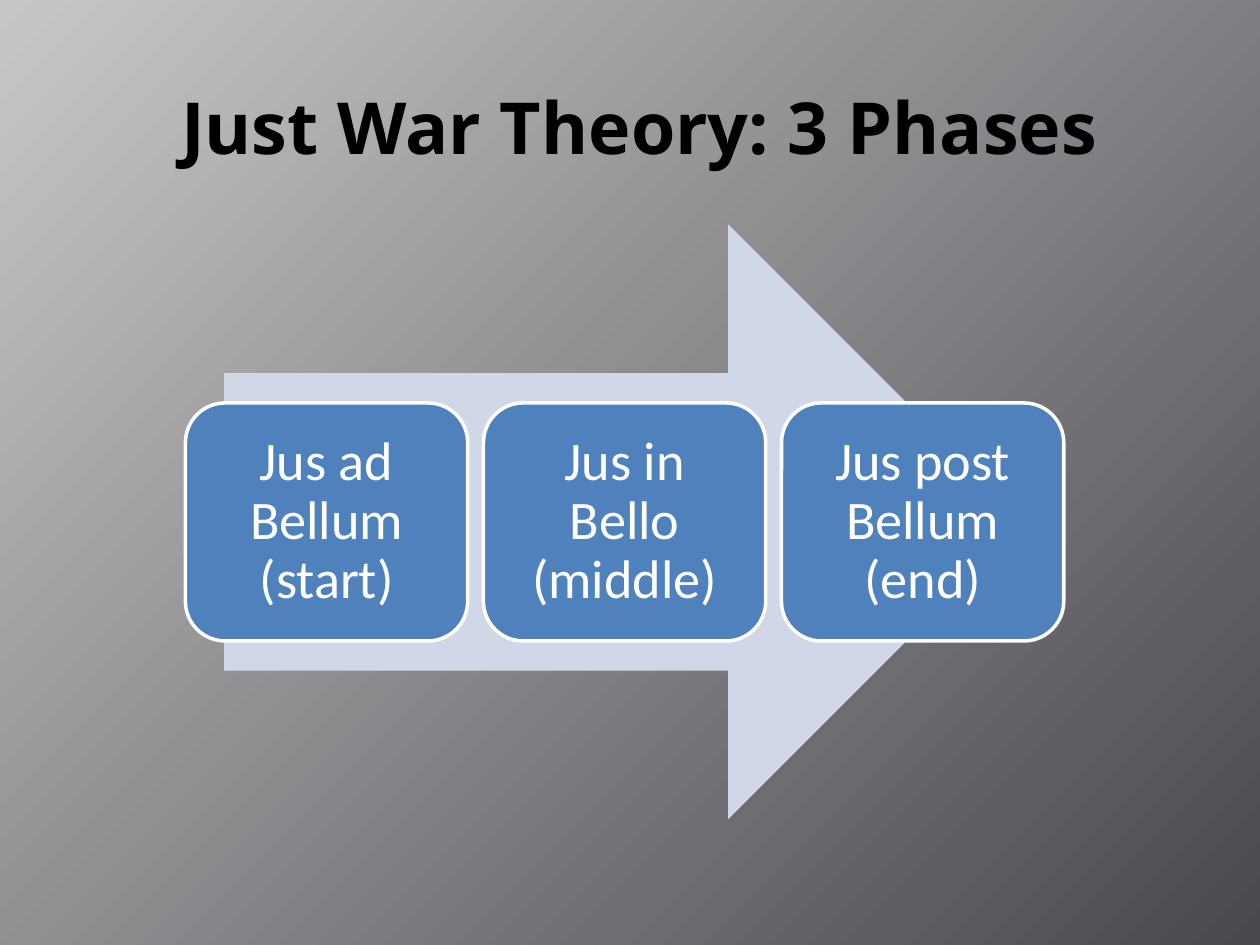
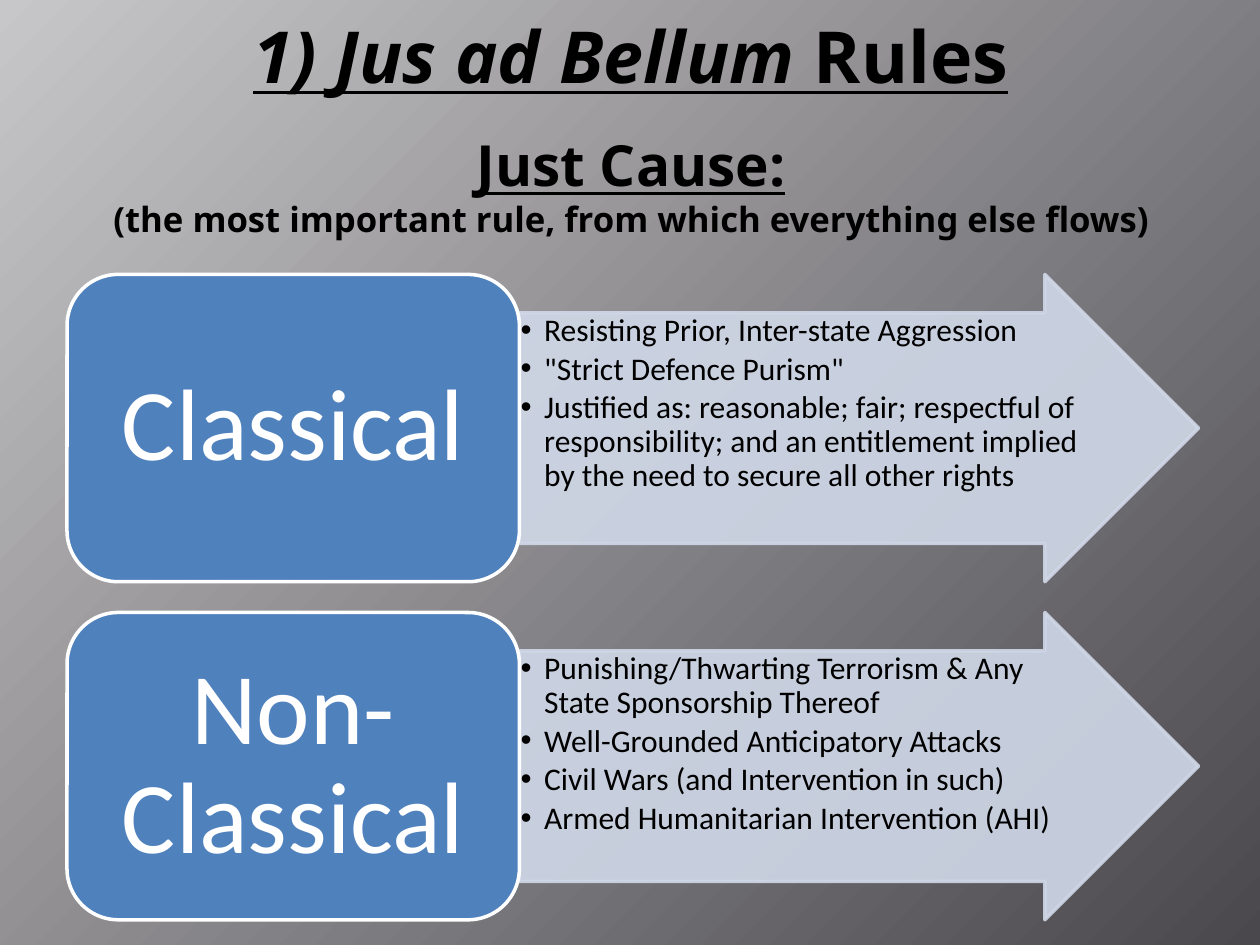
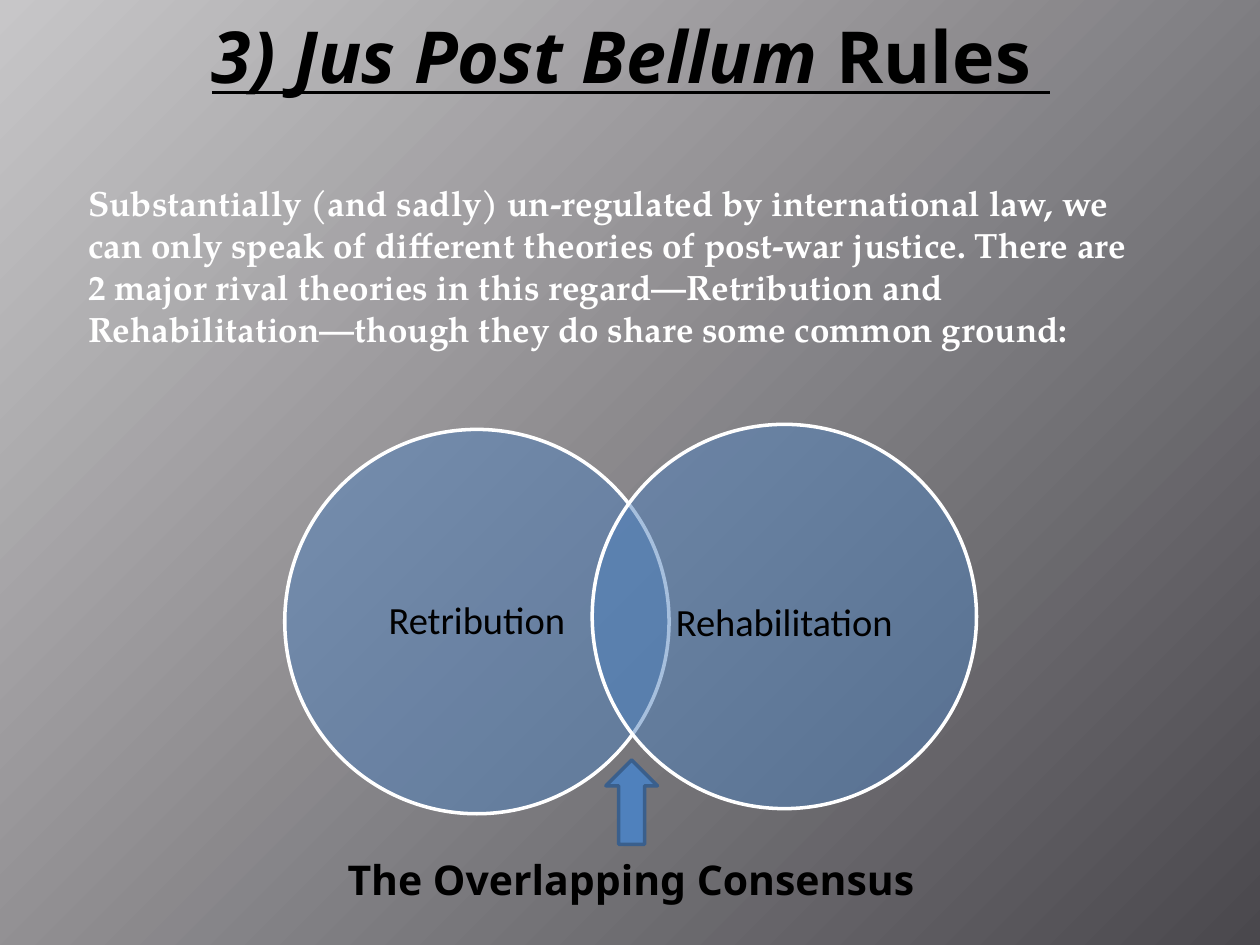
import pptx
import pptx.util
import pptx.dml.color
import pptx.enum.shapes
import pptx.enum.text
import pptx.oxml
import pptx.oxml.ns

Pt = pptx.util.Pt
Kind = pptx.enum.shapes.MSO_SHAPE
Align = pptx.enum.text.PP_ALIGN
Anchor = pptx.enum.text.MSO_ANCHOR
qn = pptx.oxml.ns.qn

# Shared look
HEAD, BODY, SERIF = "Noto Sans", "Calibri", "TeX Gyre Pagella"
BLACK, WHITE, BLUE, PALE, NAVY = "000000", "FFFFFF", "4F81BD", "D0D8E8", "3A5F8C"
LIGHT, DARK = "C7C6C8", "4A484D"


def paint(color, code, alpha=100):
    """Give a colour object a hex colour and an opacity in percent."""
    color.rgb = pptx.dml.color.RGBColor.from_string(code)
    return alpha


def node(tag, **attrs):
    item = pptx.oxml.parse_xml(f"<a:{tag} {pptx.oxml.ns.nsdecls('a')}/>")
    for name, value in attrs.items():
        item.set(name, str(value))
    return item


def fade(part, alpha):
    """Make the solid colours inside an XML part see-through."""
    for color in part.iter(qn("a:srgbClr")):
        color.append(node("alpha", val=alpha * 1000))


def write(para, text, size=18, font=BODY, color=BLACK, bold=False,
          ital=False, under=False):
    """Add one run; a closing newline becomes a line break."""
    run = para.add_run()
    run.text = text.rstrip("\n")
    face = run.font
    face.size, face.name = Pt(size), font
    face.bold, face.italic, face.underline = bold, ital, under
    paint(face.color, color)
    if text.endswith("\n"):
        para.add_line_break()


class Deck:
    def __init__(self):
        self.file = pptx.Presentation()
        self.file.slide_width, self.file.slide_height = Pt(720), Pt(540)
        self.slide = None
        self.shade()

    def shade(self):
        """Set the corner-to-corner gradient on the master."""
        master = self.file.slide_master
        fill = master.background.fill
        fill.gradient()
        for stop, code in zip(fill.gradient_stops, (LIGHT, DARK)):
            paint(stop.color, code)
        grad = master.element.find(".//" + qn("p:bgPr")).find(qn("a:gradFill"))
        grad.remove(grad.find(qn("a:lin")))
        round_fill = node("path", path="circle")
        round_fill.append(node("fillToRect", r=100000, b=100000))
        grad.append(round_fill)

    def page(self):
        self.slide = self.file.slides.add_slide(self.file.slide_layouts[6])

    def frame(self, shape, pad, anchor):
        frame = shape.text_frame
        frame.word_wrap = True
        frame.vertical_anchor = anchor
        (frame.margin_left, frame.margin_top,
         frame.margin_right, frame.margin_bottom) = map(Pt, pad)
        return frame

    def label(self, area, runs, align=Align.CENTER, anchor=Anchor.MIDDLE, **look):
        """Place a text box; runs are (text, format) pairs."""
        box = self.slide.shapes.add_textbox(*map(Pt, area))
        para = self.frame(box, (7.2, 3.6, 7.2, 3.6), anchor).paragraphs[0]
        para.alignment = align
        for text, extra in runs:
            write(para, text, **{"font": HEAD, "bold": True, **look, **extra})

    def rule(self, *runs):
        """Underlined title at the top of a rules slide."""
        self.label((36.5, 0, 648, 62.6), runs, size=41, ital=True, under=True)

    def form(self, kind, area, fill=BLUE, line=WHITE, alpha=100, edge=100):
        """Draw a preset shape with separate fill and line opacity."""
        shape = self.slide.shapes.add_shape(kind, *map(Pt, area))
        shape.shadow.inherit = False
        shape.fill.solid()
        paint(shape.fill.fore_color, fill)
        if alpha < 100:
            fade(shape.element.spPr.find(qn("a:solidFill")), alpha)
        if line is None:
            shape.line.fill.background()
            return shape
        shape.line.width = Pt(2)
        paint(shape.line.color, line)
        if edge < 100:
            fade(shape.element.spPr.find(qn("a:ln")), edge)
        return shape

    def name(self, shape, text, pad, lead=0.9, **look):
        """Centre a caption in a shape."""
        para = self.frame(shape, pad, Anchor.MIDDLE).paragraphs[0]
        para.alignment = Align.CENTER
        para.line_spacing = lead
        write(para, text, **look)

    def points(self, shape, lines):
        """Fill a shape with a bulleted list."""
        frame = self.frame(shape, (0.72,) * 4, Anchor.TOP)
        for i, text in enumerate(lines):
            para = frame.add_paragraph() if i else frame.paragraphs[0]
            para.alignment = Align.LEFT
            para.line_spacing = 0.9
            para.space_after = Pt(2.7)
            props = para._p.get_or_add_pPr()
            props.set("marL", str(Pt(13.5)))
            props.set("indent", str(-Pt(13.5)))
            props.append(node("buFont", typeface="Arial"))
            props.append(node("buChar", char="•"))
            write(para, text)


def phases(deck):
    deck.page()
    deck.label((36, 21.6, 658.8, 100.8), [("Just War Theory: 3 Phases", {})], size=41)
    deck.form(Kind.RIGHT_ARROW, (128.1, 128.2, 458, 340), PALE, None)
    steps = ["Jus ad Bellum (start)", "Jus in Bello (middle)", "Jus post Bellum (end)"]
    for i, text in enumerate(steps):
        box = deck.form(Kind.ROUNDED_RECTANGLE, (106 + 170.3 * i, 230.3, 161.3, 136))
        deck.name(box, text, (9.4,) * 4, size=31, color=WHITE)


def causes(deck):
    deck.page()
    deck.label((36.5, 60.5, 648, 90), [
        ("Just Cause:\n", {"size": 32.4, "under": True}),
        ("(the most important rule, from which everything else flows)", {"size": 19.8}),
    ])
    views = {
        "Classical": [
            "Resisting Prior, Inter-state Aggression",
            '"Strict Defence Purism"',
            "Justified as: reasonable; fair; respectful of responsibility; "
            "and an entitlement implied by the need to secure all other rights",
        ],
        "Non-Classical": [
            "Punishing/Thwarting Terrorism & Any State Sponsorship Thereof",
            "Well-Grounded Anticipatory Attacks",
            "Civil Wars (and Intervention in such)",
            "Armed Humanitarian Intervention (AHI)",
        ],
    }
    for i, (text, lines) in enumerate(views.items()):
        top = 156.8 + 193.2 * i
        arrow = deck.form(Kind.RIGHT_ARROW, (296.8, top, 388.1, 175.6), PALE, PALE, 90, 90)
        arrow.adjustments[0] = 0.75
        deck.points(arrow, lines)
        box = deck.form(Kind.ROUNDED_RECTANGLE, (38.3, top, 258.5, 175.6))
        deck.name(box, text, (17.3, 8.6, 17.3, 8.6), size=58, color=WHITE)
    deck.rule(("1) Jus ad Bellum ", {}), ("Rules", {"ital": False}))


def theories(deck):
    deck.page()
    deck.rule(("3) Jus Post Bellum ", {}), ("Rules", {"ital": False}), (" ", {}))
    # Overlapping circles
    circles = [
        ("Retribution", 162.7, 245.4, (12.2, 2.2, 12.2, 2.2), 0.9),
        ("Rehabilitation", 338.4, 242.5, (12.2, 5.6, 12.2, 0.7), 1),
    ]
    for text, left, top, pad, lead in circles:
        disc = deck.form(Kind.OVAL, (left, top, 219.6, 219.6), alpha=50)
        deck.name(disc, text, pad, lead, size=22)
    # Pointer to the overlap
    deck.form(Kind.UP_ARROW, (346.2, 434.3, 29.5, 48.2), line=NAVY)
    deck.label((36.5, 473.8, 648, 56.9), [("The Overlapping Consensus", {})], size=23.4)
    deck.label((43.2, 100.1, 620.6, 104.4), [(
        "Substantially (and sadly) un-regulated by international law, we can only speak of "
        "different theories of post-war justice. There are 2 major rival theories in this "
        "regard—Retribution and Rehabilitation—though they do share some common ground:", {})],
        Align.LEFT, Anchor.TOP, size=20, font=SERIF, color=WHITE)


def main():
    deck = Deck()
    for build in (phases, causes, theories):
        build(deck)
    deck.file.save("out.pptx")


if __name__ == "__main__":
    main()
